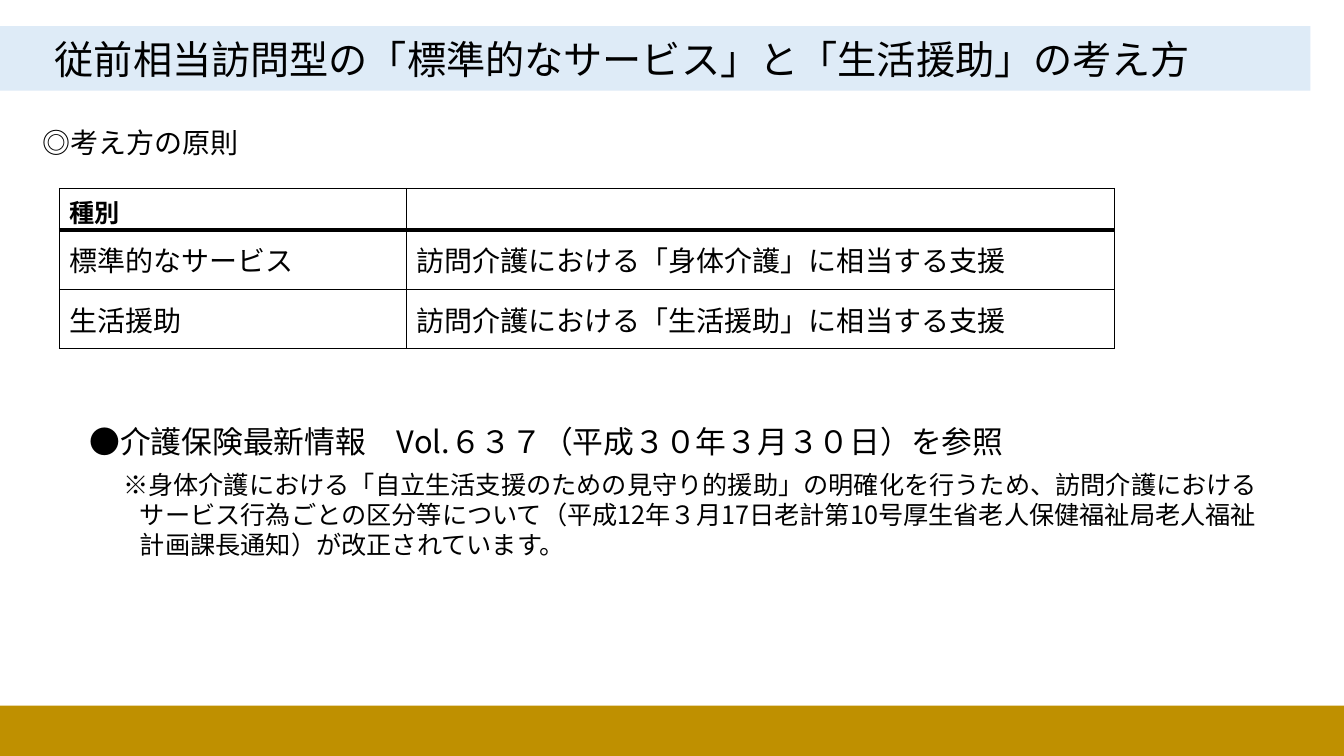
"""Builds the slide on standard home-visit services and daily living support."""
from lxml import etree
from pptx import Presentation
from pptx.dml.color import RGBColor
from pptx.enum.shapes import MSO_SHAPE
from pptx.enum.text import MSO_ANCHOR, PP_ALIGN
from pptx.oxml.ns import qn
from pptx.util import Pt

RECTANGLE = MSO_SHAPE.RECTANGLE
MIDDLE = MSO_ANCHOR.MIDDLE
LEFT = PP_ALIGN.LEFT
FONT = "Noto Sans CJK JP"
BLACK = "000000"


def color(value):
    return RGBColor.from_string(value)


def write(paragraph, text, size, bold=False, space_after=0):
    paragraph.text = text
    paragraph.alignment = LEFT
    paragraph.space_after = Pt(space_after)
    for run in paragraph.runs:
        run.font.name = FONT
        run.font.size = Pt(size)
        run.font.bold = bold
        run.font.color.rgb = color(BLACK)
        etree.SubElement(run.font._element, qn("a:ea"), typeface=FONT)


presentation = Presentation()
presentation.slide_width, presentation.slide_height = Pt(960), Pt(540)
slide = presentation.slides.add_slide(presentation.slide_layouts[6])

bands = []
for top, width, height, fill in [(18.7, 936, 46.1, "DEEBF7"), (504, 960, 36, "BF9000")]:
    band = slide.shapes.add_shape(RECTANGLE, 0, Pt(top), Pt(width), Pt(height))
    band.shadow.inherit = False
    band.fill.solid()
    band.fill.fore_color.rgb = color(fill)
    band.line.fill.background()
    bands.append(band)

title_frame = bands[0].text_frame
title_frame.margin_left = Pt(39.2)
title_frame.vertical_anchor = MIDDLE
write(title_frame.paragraphs[0], "従前相当訪問型の「標準的なサービス」と「生活援助」の考え方", 28)

principle_box = slide.shapes.add_textbox(Pt(23), Pt(86.4), Pt(208), Pt(31.7))
principle_box.text_frame.word_wrap = True
write(principle_box.text_frame.paragraphs[0], "◎考え方の原則", 20)

rows = [
    ("種別", ""),
    ("標準的なサービス", "訪問介護における「身体介護」に相当する支援"),
    ("生活援助", "訪問介護における「生活援助」に相当する支援"),
]
row_heights = [29.5, 42.5, 42.5]
column_widths = [247.7, 506.2]
table = slide.shapes.add_table(
    3, 2, Pt(42.5), Pt(134.6), Pt(sum(column_widths)), Pt(sum(row_heights))
).table
for column, width in zip(table.columns, column_widths):
    column.width = Pt(width)
for row_index, (texts, height) in enumerate(zip(rows, row_heights)):
    table.rows[row_index].height = Pt(height)
    header = row_index == 0
    for column_index, text in enumerate(texts):
        cell = table.cell(row_index, column_index)
        write(cell.text_frame.paragraphs[0], text, 18 if header else 20, bold=header)
        if not header:
            cell.vertical_anchor = MIDDLE
        properties = cell._tc.get_or_add_tcPr()
        for side in ("lnL", "lnR", "lnT", "lnB"):
            thick = (row_index, side) in [(0, "lnB"), (1, "lnT")]
            border = etree.SubElement(properties, qn("a:" + side), w=str(Pt(3 if thick else 1)))
            border_fill = etree.SubElement(border, qn("a:solidFill"))
            etree.SubElement(border_fill, qn("a:srgbClr"), val=BLACK)
        cell.fill.background()

reference_box = slide.shapes.add_textbox(Pt(56.9), Pt(227.5), Pt(917.3), Pt(177.8))
reference_frame = reference_box.text_frame
reference_frame.word_wrap = True
reference_frame.margin_top = Pt(74.4)
write(
    reference_frame.paragraphs[0],
    "●介護保険最新情報\u3000Vol.６３７（平成３０年３月３０日）を参照".replace("\\u3000", "　"),
    22,
    space_after=6.6,
)
note = reference_frame.add_paragraph()
write(
    note,
    "※身体介護における「自立生活支援のための見守り的援助」の明確化を行うため、訪問介護における\v"
    "サービス行為ごとの区分等について（平成12年３月17日老計第10号厚生省老人保健福祉局老人福祉\v"
    "計画課長通知）が改正されています。",
    18,
)
note_properties = note._p.get_or_add_pPr()
note_properties.set("marL", str(Pt(36)))
note_properties.set("indent", str(Pt(-12)))

presentation.save("out.pptx")
